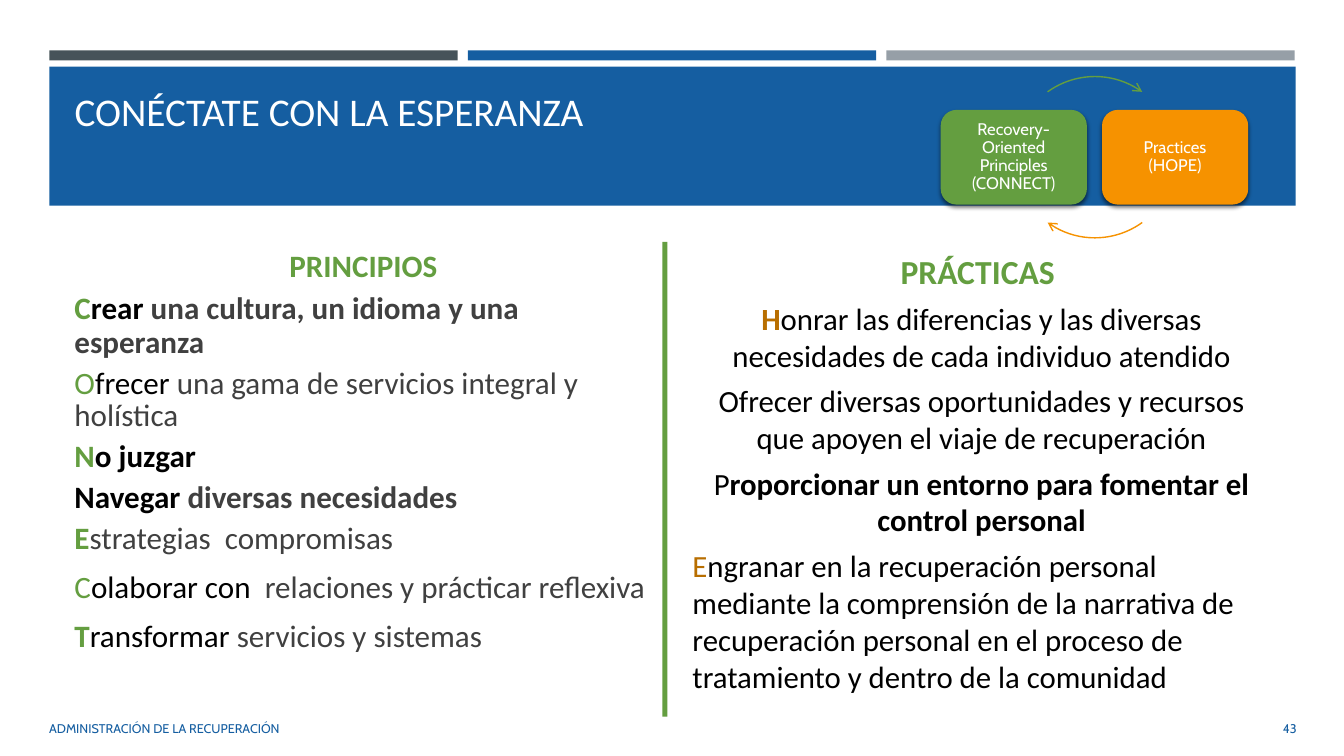
import pptx
import pptx.dml.color
import pptx.enum.shapes
import pptx.enum.text
import pptx.oxml
import pptx.oxml.ns
import pptx.util

RGBColor = pptx.dml.color.RGBColor
SHAPE = pptx.enum.shapes.MSO_SHAPE
ALIGN = pptx.enum.text.PP_ALIGN
ANCHOR = pptx.enum.text.MSO_ANCHOR

BLUE = RGBColor(0x15, 0x5E, 0xA1)
SLATE = RGBColor(0x46, 0x53, 0x59)
GRAY = RGBColor(0x96, 0x9F, 0xA7)
GREEN = RGBColor(0x64, 0x9E, 0x40)
ORANGE = RGBColor(0xF6, 0x92, 0x00)
BROWN = RGBColor(0xB8, 0x6E, 0x00)
BLACK = RGBColor(0, 0, 0)
DARK = RGBColor(0x40, 0x40, 0x40)
WHITE = RGBColor(0xFF, 0xFF, 0xFF)

CELL = pptx.util.Inches(0.1)  # one column or row of the grid


def cells(*counts):
    return [round(count * CELL) for count in counts]


def write(paragraph, text, font="Calibri", size=22, color=BLACK, bold=False):
    run = paragraph.add_run()
    run.text = text
    run.font.name = font
    run.font.size = pptx.util.Pt(size)
    run.font.color.rgb = color
    run.font.bold = bold


def space(paragraph, align=ALIGN.LEFT, line=1.0, after=6):
    paragraph.alignment = align
    paragraph.line_spacing = line
    paragraph.space_before = pptx.util.Pt(0)
    paragraph.space_after = pptx.util.Pt(after)


def effects(shape, content=""):
    namespace = pptx.oxml.ns.nsdecls("a")
    return pptx.oxml.parse_xml(f"<a:effectLst {namespace}>{content}</a:effectLst>")


class SlideBuilder:
    """Holds the slide and the shared style; places are in grid cells."""

    def __init__(self, presentation):
        self.slide = presentation.slides.add_slide(presentation.slide_layouts[5])
        self.shapes = self.slide.shapes
        self.label_font = "Cabin"

    def block(self, place, fill, kind=SHAPE.RECTANGLE):
        shape = self.shapes.add_shape(kind, *cells(*place))
        shape.shadow.inherit = False
        shape.fill.solid()
        shape.fill.fore_color.rgb = fill
        shape.line.fill.background()
        return shape

    def title(self, place, text):
        shape = self.shapes.title
        shape.left, shape.top, shape.width, shape.height = cells(*place)
        # Raise the single line above the middle of the band
        self.frame(shape, ANCHOR.MIDDLE, (1, 0.5, 1, 4.7))
        paragraph = shape.text_frame.paragraphs[0]
        space(paragraph, line=0.9, after=0)
        write(paragraph, text, size=28, color=WHITE)
        # Bring the title in front of the band
        self.shapes._spTree.append(shape._element)

    def frame(self, shape, anchor, insets=(1, 0.5, 1, 0.5)):
        frame = shape.text_frame
        frame.word_wrap = True
        frame.auto_size = pptx.enum.text.MSO_AUTO_SIZE.NONE
        frame.vertical_anchor = anchor
        (frame.margin_left, frame.margin_top,
         frame.margin_right, frame.margin_bottom) = cells(*insets)
        return frame

    def label(self, place, text, align):
        frame = self.frame(self.shapes.add_textbox(*cells(*place)), ANCHOR.MIDDLE)
        space(frame.paragraphs[0], align)
        write(frame.paragraphs[0], text, self.label_font, 9, BLUE)

    def card(self, place, text, fill):
        shape = self.block(place, fill, SHAPE.ROUNDED_RECTANGLE)
        properties = shape._element.spPr
        properties.remove(properties.find(pptx.oxml.ns.qn("a:effectLst")))
        properties.append(effects(
            shape,
            '<a:outerShdw blurRad="38100" dist="25400" dir="5400000" rotWithShape="0">'
            '<a:srgbClr val="000000"><a:alpha val="55000"/></a:srgbClr></a:outerShdw>'))
        frame = self.frame(shape, ANCHOR.MIDDLE, (0.9,) * 4)
        space(frame.paragraphs[0], ALIGN.CENTER, 0.9, 0)
        write(frame.paragraphs[0], text, self.label_font, 12, WHITE)

    def curved_arrow(self, place, start, end, color):
        shape = self.shapes.add_shape(SHAPE.ARC, *cells(*place))
        shape.shadow.inherit = False
        for index, degrees in enumerate((start, end)):
            shape.adjustments[index] = degrees * 0.6
        shape.fill.background()
        shape.line.color.rgb = color
        shape.line.width = pptx.util.Pt(1)
        shape.line._get_or_add_ln().append(pptx.oxml.parse_xml(
            f'<a:tailEnd {pptx.oxml.ns.nsdecls("a")} type="arrow"/>'))

    def column(self, place, size, paragraphs):
        frame = self.frame(self.shapes.add_textbox(*cells(*place)), ANCHOR.TOP)
        for index, (runs, spacing) in enumerate(paragraphs):
            paragraph = frame.paragraphs[0] if index == 0 else frame.add_paragraph()
            space(paragraph, **spacing)
            for text, style in runs:
                write(paragraph, text, **{"size": size, **style})


def main():
    presentation = pptx.Presentation()
    presentation.slide_width = pptx.util.Inches(13.33)
    presentation.slide_height = pptx.util.Inches(7.5)
    builder = SlideBuilder(presentation)

    # Header bars, band and title
    for index, color in enumerate((SLATE, BLUE, GRAY)):
        builder.block((4.9 + 41.5 * index, 5, 40.5, 1), color)
    builder.block((4.9, 6.6, 123.6, 13.8), BLUE)
    builder.title((6.4, 8, 85, 10.8), "CONÉCTATE CON LA ESPERANZA")

    # Footer and page number
    builder.label((118.1, 70.3, 11.5, 4), "43", ALIGN.RIGHT)
    builder.label((3.9, 70.3, 74.6, 4), "ADMINISTRACIÓN DE LA RECUPERACIÓN", ALIGN.LEFT)

    # Divider between the two columns
    builder.block((65.7, 24, 0.5, 47.1), GREEN)

    # Cycle of principles and practices
    cycle = (
        ("Recovery-Oriented Principles (CONNECT)", GREEN, 234.1, 305.9),
        ("Practices (HOPE)", ORANGE, 54.1, 125.9),
    )
    for index, (text, color, start, end) in enumerate(cycle):
        builder.card((93.3 + 16 * index, 10.9, 14.5, 9.4), text, color)
        builder.curved_arrow((100.6, 7.6, 16, 16), start, end, color)

    # Principles column
    green, green_bold = {"color": GREEN}, {"color": GREEN, "bold": True}
    black, black_bold = {}, {"bold": True}
    dark, dark_bold = {"color": DARK}, {"color": DARK, "bold": True}
    tight, loose = {"line": 0.87}, {"line": 0.87, "after": 12}
    centered = {"align": ALIGN.CENTER}
    builder.column((6.4, 24.4, 59.3, 44), 22.2, [
        ([("PRINCIPIOS", green_bold)], {"align": ALIGN.CENTER, "line": 0.9}),
        ([("C", green_bold), ("rear", black_bold),
          (" una cultura, un idioma y una esperanza", dark_bold)], {"line": 0.9}),
        ([("O", green), ("frecer ", black),
          ("una gama de servicios integral y holística", dark)], tight),
        ([("N", green_bold), ("o juzgar", black_bold)], tight),
        ([("Navegar ", black_bold), ("diversas necesidades", dark_bold)], tight),
        ([("E", green_bold), ("strategias  compromisas", dark)], loose),
        ([("C", green), ("olaborar con  ", black),
          ("relaciones y prácticar reflexiva", dark)], loose),
        ([("T", green_bold), ("ransformar ", black),
          ("servicios y sistemas", dark)], loose),
    ])

    # Practices column
    builder.column((67.7, 24.4, 59.3, 44), 22, [
        ([("PRÁCTICAS ", {**green_bold, "size": 24})], centered),
        ([("H", {"color": BROWN, "bold": True}),
          ("onrar las diferencias y las diversas necesidades de cada individuo atendido",
           black)], centered),
        ([("Ofrecer diversas oportunidades y recursos que apoyen el viaje de recuperación",
           black)], centered),
        ([("P", black),
          ("roporcionar un entorno para fomentar el control personal", black_bold)],
         centered),
        ([("E", {"color": BROWN}),
          ("ngranar en la recuperación personal mediante la comprensión de la narrativa "
           "de recuperación personal en el proceso de tratamiento y dentro de la "
           "comunidad", black)], {}),
    ])

    presentation.save("out.pptx")


if __name__ == "__main__":
    main()
